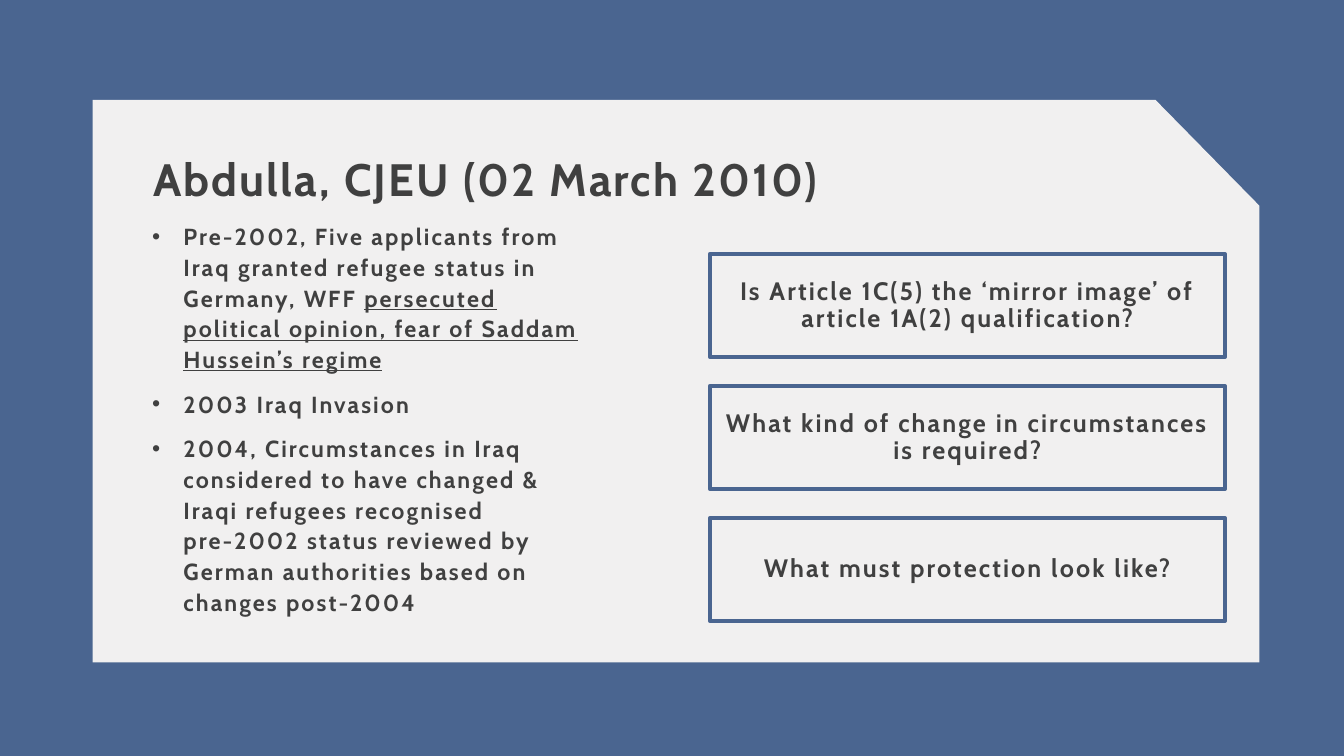
from dataclasses import dataclass

from lxml import etree
from pptx import Presentation
from pptx.dml.color import RGBColor
from pptx.enum.shapes import MSO_SHAPE
from pptx.enum.text import MSO_ANCHOR, PP_ALIGN
from pptx.oxml.ns import qn
from pptx.util import Inches, Pt


@dataclass(frozen=True)
class Theme:
    blue: RGBColor = RGBColor(0x4A, 0x65, 0x90)
    paper: RGBColor = RGBColor(0xF1, 0xF0, 0xF0)
    ink: RGBColor = RGBColor(0x40, 0x40, 0x40)
    font: str = "Cabin"
    title: float = 32.4
    body: float = 16.6
    box: float = 18
    tracking: int = 150  # hundredths of a point


THEME = Theme()

TITLE = "Abdulla, CJEU (02 March 2010)"
# Each fact is a list of (text, underlined) runs
FACTS = [
    [("Pre-2002, Five applicants from Iraq granted refugee status in Germany, WFF ", False),
     ("persecuted political opinion, fear of Saddam Hussein’s regime", True)],
    [("2003 Iraq Invasion", False)],
    [("2004, Circumstances in Iraq considered to have changed & Iraqi refugees "
      "recognised pre-2002 status reviewed by German authorities based on "
      "changes post-2004", False)],
]
QUESTIONS = [
    "Is Article 1C(5) the ‘mirror image’ of article 1A(2) qualification?",
    "What kind of change in circumstances is required?",
    "What must protection look like?",
]

# Question column: left edge, first row, row pitch and box size in inches
BOX_LEFT, BOX_TOP, BOX_PITCH = 7.04, 2.52, 1.31
BOX_WIDTH, BOX_HEIGHT = 5.11, 1.02


def add_run(p, text, size, underline=False):
    r = p.add_run()
    r.text = text
    f = r.font
    f.name, f.size, f.bold = THEME.font, Pt(size), True
    f.color.rgb = THEME.ink
    if underline:
        f.underline = True
    r._r.get_or_add_rPr().set("spc", str(THEME.tracking))


def add_panel(s):
    """Light panel with its top right corner cut off."""
    corners = [(0.92, 0.99), (11.46, 0.99), (12.49, 2.04), (12.49, 6.57), (0.92, 6.57)]
    points = [(Inches(x), Inches(y)) for x, y in corners]
    builder = s.shapes.build_freeform(*points[0])
    builder.add_line_segments(points[1:], close=True)
    panel = builder.convert_to_shape()
    panel.shadow.inherit = False
    panel.fill.solid()
    panel.fill.fore_color.rgb = THEME.paper
    panel.line.fill.background()
    # Placeholders come after the panel in the drawing order
    s.shapes._spTree.remove(panel._element)
    s.shapes._spTree.insert(2, panel._element)


def place(sp, left, top, width, height):
    sp.left, sp.top = Inches(left), Inches(top)
    sp.width, sp.height = Inches(width), Inches(height)
    tf = sp.text_frame
    tf.word_wrap = True
    tf.vertical_anchor = MSO_ANCHOR.TOP
    return tf


def fill_title(sp):
    p = place(sp, 1.42, 1.51, 7.46, 0.81).paragraphs[0]
    p.alignment = PP_ALIGN.LEFT
    p.line_spacing = 0.9
    add_run(p, TITLE, THEME.title)


def set_bullet(p, indent):
    pPr = p._p.get_or_add_pPr()
    pPr.set("marL", str(Inches(indent)))
    pPr.set("indent", str(-Inches(indent)))
    etree.SubElement(pPr, qn("a:buFont")).set("typeface", "Arial")
    etree.SubElement(pPr, qn("a:buChar")).set("char", "•")


def fill_facts(sp):
    tf = place(sp, 1.41, 2.13, 4.65, 4.18)
    tf.margin_right = Inches(0.3)
    for i, runs in enumerate(FACTS):
        p = tf.add_paragraph() if i else tf.paragraphs[0]
        p.line_spacing, p.space_before = 1.1, Pt(10)
        set_bullet(p, 0.31)
        for text, underline in runs:
            add_run(p, text, THEME.body, underline)


def add_question(s, row, text):
    sp = s.shapes.add_shape(
        MSO_SHAPE.RECTANGLE, Inches(BOX_LEFT), Inches(BOX_TOP + row * BOX_PITCH),
        Inches(BOX_WIDTH), Inches(BOX_HEIGHT))
    sp.shadow.inherit = False
    sp.fill.solid()
    sp.fill.fore_color.rgb = THEME.paper
    sp.line.color.rgb = THEME.blue
    sp.line.width = Pt(3)
    etree.SubElement(sp.line._get_or_add_ln(), qn("a:round"))
    tf = sp.text_frame
    tf.word_wrap = True
    tf.vertical_anchor = MSO_ANCHOR.MIDDLE
    p = tf.paragraphs[0]
    p.alignment = PP_ALIGN.CENTER
    p.line_spacing, p.space_before = 0.9, Pt(10)
    add_run(p, text, THEME.box)


def main():
    prs = Presentation()
    prs.slide_width, prs.slide_height = Inches(13.33), Inches(7.5)
    s = prs.slides.add_slide(prs.slide_layouts[1])

    # Background and panel
    s.background.fill.solid()
    s.background.fill.fore_color.rgb = THEME.blue
    add_panel(s)

    # Title and facts
    fill_title(s.shapes.title)
    fill_facts(s.placeholders[1])

    # Questions
    for row, text in enumerate(QUESTIONS):
        add_question(s, row, text)

    prs.save("out.pptx")


if __name__ == "__main__":
    main()
